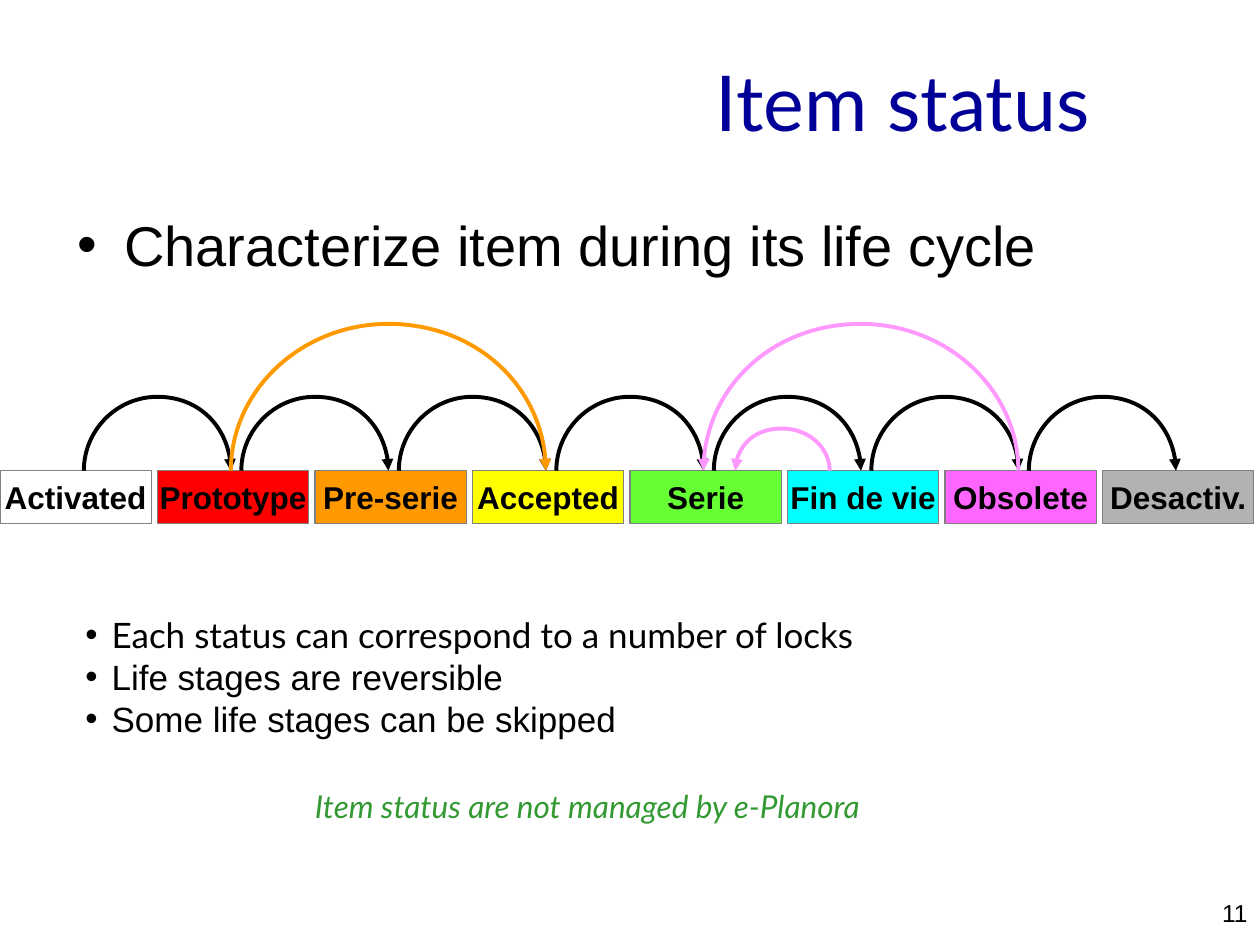
from lxml.etree import SubElement
from pptx import Presentation
from pptx.dml.color import RGBColor
from pptx.enum.shapes import MSO_SHAPE
from pptx.enum.text import MSO_ANCHOR, PP_ALIGN
from pptx.oxml.ns import qn
from pptx.util import Cm, Pt

BLACK = RGBColor(0x00, 0x00, 0x00)
NAVY = RGBColor(0x00, 0x00, 0x99)
GREEN = RGBColor(0x33, 0x99, 0x33)
GREY = RGBColor(0x80, 0x80, 0x80)
ORANGE = RGBColor(0xFF, 0x99, 0x00)
PINK = RGBColor(0xFF, 0x99, 0xFF)

STATUSES = [
    ("Activated", RGBColor(0xFF, 0xFF, 0xFF)),
    ("Prototype", RGBColor(0xFF, 0x00, 0x00)),
    ("Pre-serie", ORANGE),
    ("Accepted", RGBColor(0xFF, 0xFF, 0x00)),
    ("Serie", RGBColor(0x66, 0xFF, 0x33)),
    ("Fin de vie", RGBColor(0x00, 0xFF, 0xFF)),
    ("Obsolete", RGBColor(0xFF, 0x66, 0xFF)),
    ("Desactiv.", RGBColor(0xB2, 0xB2, 0xB2)),
]

# Where arrows meet a status box, in cm from its left edge
ENTRY, EXIT = 1.48, 1.69
BACK_EXIT, BACK_ENTRY = 0.85, 2.12
# Arrow heights in cm
LOW, MIDDLE, HIGH = 0.85, 1.49, 2.96
# Control point distance for a quarter ellipse
ROUNDNESS = 0.55


def place(shape, box):
    shape.left, shape.top, shape.width, shape.height = (Cm(length) for length in box)


def format_paragraph(paragraph, size, color, name="Arial", align=PP_ALIGN.LEFT):
    paragraph.alignment = align
    font = paragraph.font
    font.size, font.name = Pt(size), name
    font.color.rgb = color


def add_bullet(paragraph, indent):
    properties = paragraph._p.get_or_add_pPr()
    properties.set("marL", str(Cm(indent)))
    properties.set("indent", str(-Cm(indent)))
    SubElement(properties, qn("a:buFont")).set("typeface", "Arial")
    SubElement(properties, qn("a:buChar")).set("char", "•")


def add_text(slide, box, text):
    frame = slide.shapes.add_textbox(*(Cm(length) for length in box)).text_frame
    frame.word_wrap = True
    frame.text = text
    return frame


def add_title(slide, box):
    title = slide.shapes.title
    place(title, box)
    title.text_frame.text = "Item status"
    title.text_frame.vertical_anchor = MSO_ANCHOR.MIDDLE
    format_paragraph(title.text_frame.paragraphs[0], 44, NAVY, "Lato", PP_ALIGN.RIGHT)


def add_body(slide, box):
    body = slide.placeholders[1]
    place(body, box)
    body.text_frame.text = "Characterize item during its life cycle"
    paragraph = body.text_frame.paragraphs[0]
    format_paragraph(paragraph, 32, BLACK)
    add_bullet(paragraph, 0.95)


def add_status(slide, box, name, color):
    shape = slide.shapes.add_shape(MSO_SHAPE.RECTANGLE, *(Cm(length) for length in box))
    shape.shadow.inherit = False
    shape.fill.solid()
    shape.fill.fore_color.rgb = color
    shape.line.color.rgb = GREY
    shape.line.width = Pt(0.75)
    frame = shape.text_frame
    frame.word_wrap = False
    frame.vertical_anchor = MSO_ANCHOR.MIDDLE
    frame.text = name
    format_paragraph(frame.paragraphs[0], 18, BLACK, align=PP_ALIGN.CENTER)
    frame.paragraphs[0].font.bold = True


def add_arc_arrow(slide, start, end, base, height, color):
    """Draw a half ellipse from start to end, standing on base."""
    middle, top = (start + end) / 2, base - height
    reach = (end - start) / 2 * ROUNDNESS
    shoulder = base - height * ROUNDNESS
    points = [
        (start, shoulder), (middle - reach, top), (middle, top),
        (middle + reach, top), (end, shoulder), (end, base),
    ]
    builder = slide.shapes.build_freeform(Cm(start), Cm(base))
    builder.add_line_segments([(Cm(x), Cm(y)) for x, y in points], close=False)
    arc = builder.convert_to_shape()

    # Join each three straight segments into one Bézier curve
    segments = list(arc._element.iter(qn("a:lnTo")))
    outline = segments[0].getparent()
    for first in range(0, len(segments), 3):
        curve = SubElement(outline, qn("a:cubicBezTo"))
        for segment in segments[first:first + 3]:
            curve.append(segment[0])
            outline.remove(segment)

    arc.shadow.inherit = False
    arc.fill.background()
    arc.line.color.rgb = color
    arc.line.width = Pt(2.25)
    SubElement(arc.line._get_or_add_ln(), qn("a:tailEnd")).set("type", "triangle")


def add_life_cycle(slide, box):
    left, top, width, height = box
    pitch = width / len(STATUSES)
    box_height = height - HIGH
    base = top + HIGH

    # Status boxes
    for index, (name, color) in enumerate(STATUSES):
        add_status(slide, (left + index * pitch, base, 3.05, box_height), name, color)

    # Steps forward, then steps back, then the skipped stage
    arrows = [(i, EXIT, i + 1, ENTRY, MIDDLE, BLACK) for i in range(len(STATUSES) - 1)]
    arrows += [
        (5, BACK_EXIT, 4, BACK_ENTRY, LOW, PINK),
        (6, ENTRY, 4, ENTRY, HIGH, PINK),
        (1, ENTRY, 3, ENTRY, HIGH, ORANGE),
    ]
    for source, leave, target, arrive, rise, color in arrows:
        start = left + source * pitch + leave
        end = left + target * pitch + arrive
        add_arc_arrow(slide, start, end, base, rise, color)


def add_remarks(slide, box):
    lines = [
        ("Each status can correspond to a number of locks", "Lato"),
        ("Life stages are reversible", "Arial"),
        ("Some life stages can be skipped", "Arial"),
    ]
    frame = add_text(slide, box, "\n".join(text for text, _ in lines))
    frame.vertical_anchor = MSO_ANCHOR.MIDDLE
    for paragraph, (_, name) in zip(frame.paragraphs, lines):
        format_paragraph(paragraph, 20, BLACK, name)
        add_bullet(paragraph, 0.53)


def add_note(slide, box):
    frame = add_text(slide, box, "Item status are not managed by e-Planora")
    format_paragraph(frame.paragraphs[0], 18, GREEN, "Lato")
    frame.paragraphs[0].font.italic = True


def add_page_number(slide, box):
    frame = add_text(slide, box, "11")
    format_paragraph(frame.paragraphs[0], 14, BLACK, align=PP_ALIGN.RIGHT)


def main():
    presentation = Presentation()
    presentation.slide_width, presentation.slide_height = Cm(25.4), Cm(19.05)
    slide = presentation.slides.add_slide(presentation.slide_layouts[1])
    add_page_number(slide, (20.12, 17.98, 5.28, 0.64))
    add_title(slide, (0.64, 0.43, 21.59, 3.18))
    add_body(slide, (1.3, 4.11, 22.66, 2.54))
    add_life_cycle(slide, (0, 6.53, 25.4, 4.03))
    add_remarks(slide, (1.47, 12.22, 16.38, 2.82))
    add_note(slide, (6.1, 15.75, 12.55, 1.02))
    presentation.save("out.pptx")


if __name__ == "__main__":
    main()
